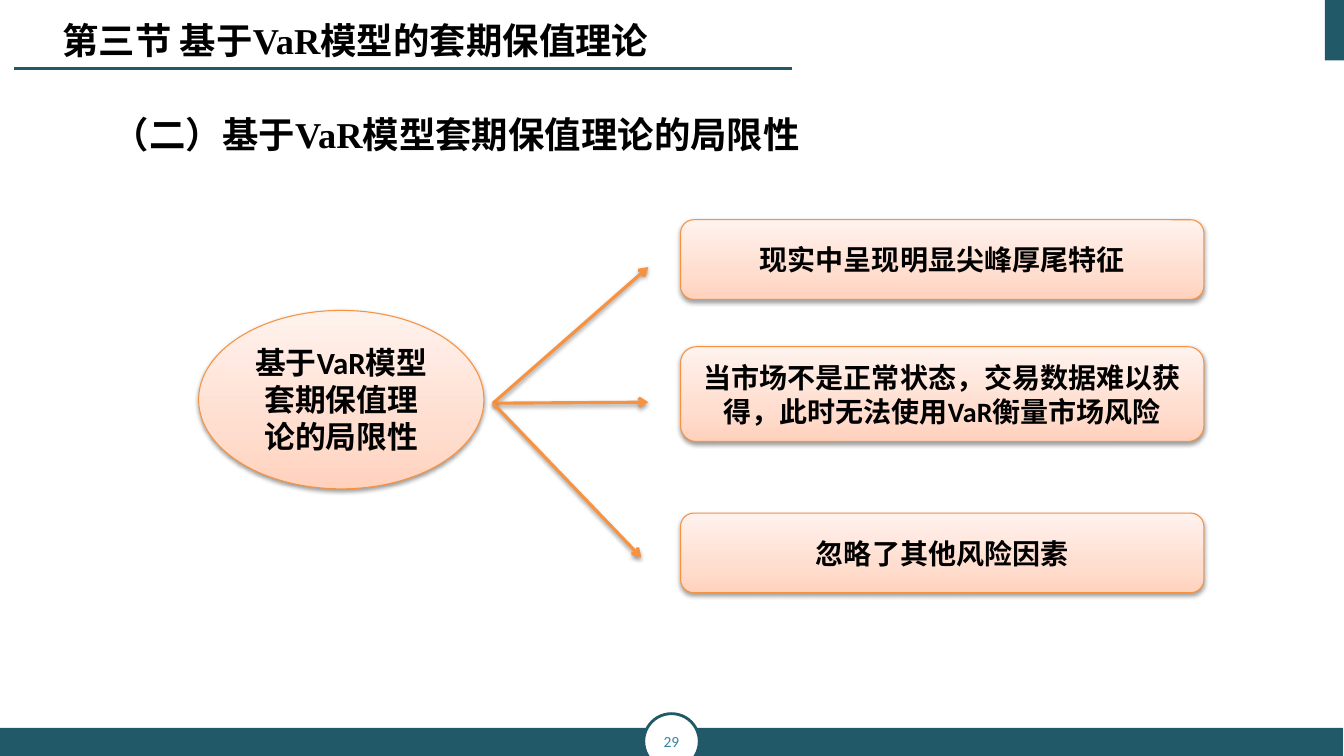
from copy import deepcopy

from lxml.etree import SubElement
from pptx import Presentation
from pptx.dml.color import RGBColor
from pptx.enum.shapes import MSO_CONNECTOR, MSO_SHAPE
from pptx.enum.text import MSO_ANCHOR, MSO_AUTO_SIZE, PP_ALIGN
from pptx.oxml.ns import qn
from pptx.util import Inches, Pt

TEAL, ORANGE = "215968", "F69240"
CJK, SERIF, SANS = "Noto Sans CJK SC", "Times New Roman", "Calibri"
PEACH_STOPS = [(0, "FFD2BD"), (0.35, "FFDED0"), (1, "FFF2ED")]


def rgb(color):
    return RGBColor.from_string(color)


def style_run(r, size, font, color="000000", bold=True):
    r.font.size, r.font.bold, r.font.name = Pt(size), bold, font
    r.font.color.rgb = rgb(color)
    SubElement(r.font._element, qn("a:ea"), typeface=CJK)


def set_effects(shape, shadow=False):
    effects = SubElement(shape._element.spPr, qn("a:effectLst"))
    if shadow:
        outer = SubElement(effects, qn("a:outerShdw"), blurRad="40000",
                           dist="20000", dir="5400000", rotWithShape="0")
        black = SubElement(outer, qn("a:srgbClr"), val="000000")
        SubElement(black, qn("a:alpha"), val="38000")


def fill_peach(shape):
    shape.fill.gradient()
    shape.fill.gradient_angle = 90
    first = shape._element.spPr.find(".//" + qn("a:gs"))
    first.addnext(deepcopy(first))
    for stop, (position, color) in zip(shape.fill.gradient_stops, PEACH_STOPS):
        stop.position = position
        stop.color.rgb = rgb(color)


def add_plain(s, kind, x, y, w, h, fill):
    sp = s.shapes.add_shape(kind, Inches(x), Inches(y), Inches(w), Inches(h))
    sp.shadow.inherit = False
    sp.fill.solid()
    sp.fill.fore_color.rgb = rgb(fill)
    sp.line.fill.background()
    return sp


def add_line(s, x1, y1, x2, y2, color, width):
    line = s.shapes.add_connector(MSO_CONNECTOR.STRAIGHT, Inches(x1),
                                  Inches(y1), Inches(x2), Inches(y2))
    line.line.color.rgb = rgb(color)
    line.line.width = Pt(width)
    return line


def center_text(sp, text, size, font, color="000000", bold=True):
    tf = sp.text_frame
    tf.word_wrap = True
    tf.vertical_anchor = MSO_ANCHOR.MIDDLE
    p = tf.paragraphs[0]
    p.text = text
    p.alignment = PP_ALIGN.CENTER
    style_run(p.runs[0], size, font, color, bold)


def add_text(s, x, y, w, h, parts, size):
    tf = s.shapes.add_textbox(Inches(x), Inches(y), Inches(w), Inches(h)).text_frame
    tf.word_wrap = True
    p = tf.paragraphs[0]
    for text, font in parts:
        r = p.add_run()
        r.text = text
        style_run(r, size, font)
    return tf


def add_frame(s, w, h, number):
    # Corner block, footer band and page number
    add_plain(s, MSO_SHAPE.RECTANGLE, w - 0.19, 0, 0.2, 0.6, TEAL)
    add_plain(s, MSO_SHAPE.RECTANGLE, 0, h - 0.28, w - 0.01, 0.28, TEAL)
    badge = add_plain(s, MSO_SHAPE.OVAL, w / 2 - 0.28, h - 0.42, 0.55, 0.55, "FFFFFF")
    badge.line.color.rgb = rgb(TEAL)
    badge.line.width = Pt(2)
    center_text(badge, number, 11, SANS, "31859C", False)


def add_header(s, x, y, w):
    # Section title with its rule, then the heading
    set_effects(add_line(s, x + 7.34, y + 0.55, x - 0.38, y + 0.55, TEAL, 1.5))
    heading = add_text(s, x, y + 0.63, w, 6.16,
                       [("（二）基于VaR模型套期保值理论的局限性", SERIF)], 26)
    p = heading.paragraphs[0]
    p.line_spacing = 1.7
    p._p.get_or_add_pPr().set("marL", "0")
    p._p.get_or_add_pPr().set("indent", str(Inches(0.5)))
    title = add_text(s, x, y, 7.8, 0.54, [("第三节 基于", CJK), ("VaR", SERIF),
                                         ("模型的套期保值理论", CJK)], 26)
    title.auto_size = MSO_AUTO_SIZE.SHAPE_TO_FIT_TEXT


def add_node(s, kind, x, y, w, h, text, size, font):
    node = s.shapes.add_shape(kind, Inches(x), Inches(y), Inches(w), Inches(h))
    fill_peach(node)
    node.line.color.rgb = rgb(ORANGE)
    node.line.width = Pt(0.75)
    set_effects(node, shadow=True)
    center_text(node, text, size, font)


def add_arrow(s, x1, y1, x2, y2):
    arrow = add_line(s, x1, y1, x2, y2, ORANGE, 2.25)
    SubElement(arrow._element.spPr.find(qn("a:ln")), qn("a:tailEnd"), type="arrow")
    set_effects(arrow, shadow=True)


def add_limits_diagram(s, x, y):
    # Topic ellipse on the left
    add_node(s, MSO_SHAPE.OVAL, x, y + 0.9, 2.83, 1.77,
             "基于VaR模型套期保值理论的局限性", 22, SANS)
    # Arrows fanning out to the limits
    for end_x, end_y in [(4.46, 0.47), (4.46, 1.81), (4.39, 3.35)]:
        add_arrow(s, x + 2.92, y + 1.82, x + end_x, y + end_y)
    # Limits on the right
    limits = [
        (0, 0.79, "现实中呈现明显尖峰厚尾特征", SERIF),
        (1.26, 0.94, "当市场不是正常状态，交易数据难以获得，此时无法使用VaR衡量市场风险", SANS),
        (2.91, 0.79, "忽略了其他风险因素", SANS),
    ]
    for top, height, text, font in limits:
        add_node(s, MSO_SHAPE.ROUNDED_RECTANGLE, x + 4.78, y + top, 5.19, height,
                 text, 20, font)


def main():
    prs = Presentation()
    prs.slide_width, prs.slide_height = Inches(13.33), Inches(7.5)
    s = prs.slides.add_slide(prs.slide_layouts[6])
    add_frame(s, 13.33, 7.5, "29")
    add_header(s, 0.52, 0.13, 12.52)
    add_limits_diagram(s, 1.97, 2.18)
    prs.save("out.pptx")


if __name__ == "__main__":
    main()
